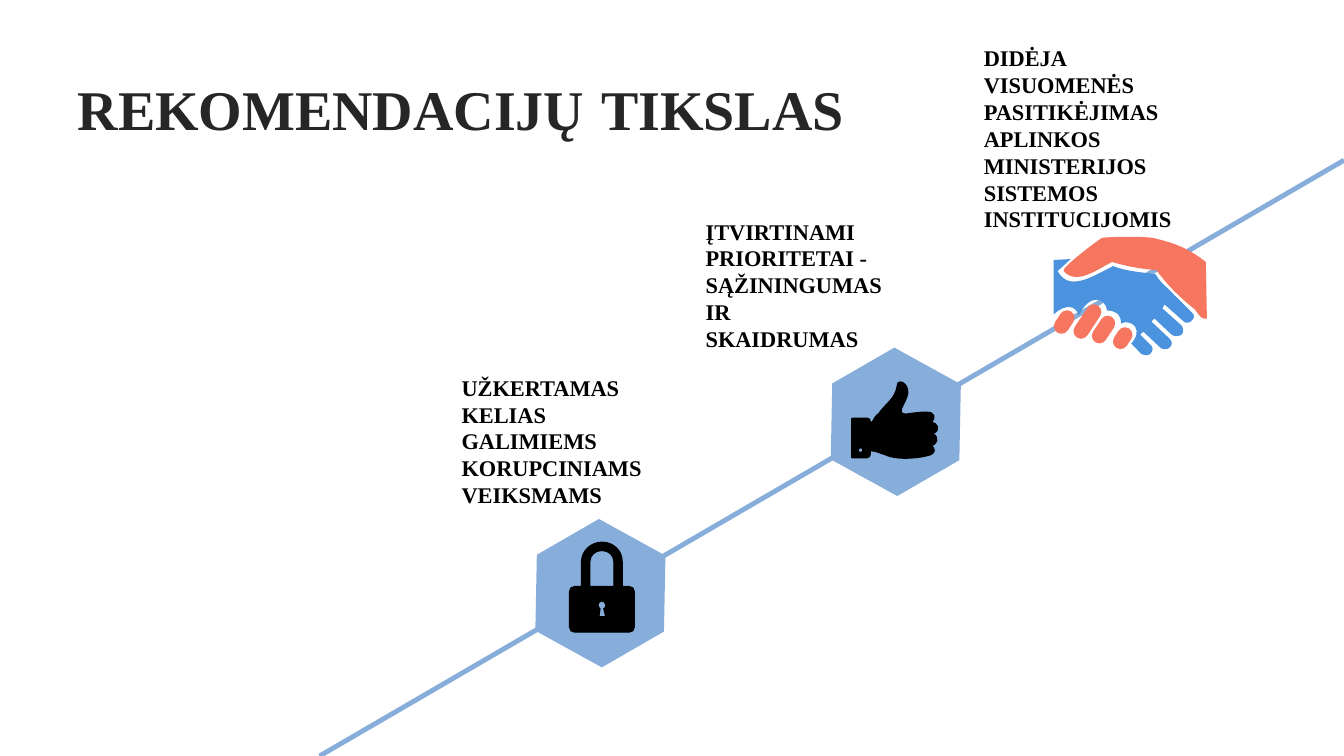
import copy

import pptx
import pptx.dml.color
import pptx.enum.shapes
import pptx.enum.text
import pptx.oxml
import pptx.oxml.ns
import pptx.util

Inches = pptx.util.Inches
Pt = pptx.util.Pt
RGBColor = pptx.dml.color.RGBColor
Shape = pptx.enum.shapes.MSO_SHAPE

BLACK = RGBColor(0x00, 0x00, 0x00)
CHARCOAL = RGBColor(0x26, 0x26, 0x26)
STEEL_BLUE = RGBColor(0x87, 0xAD, 0xDB)
CORAL = RGBColor(0xF7, 0x76, 0x60)
HAND_BLUE = RGBColor(0x4C, 0x93, 0xDF)

THUMB = """M 854 444 C 852 444 851 445 851 447 C 851 448 852 449 854 449
C 855 449 856 448 856 447 C 856 445 855 444 854 444 Z
M 893 379 C 896 379 899 382 900 386 C 903 396 886 410 898 411
C 906 410 910 409 919 409 C 927 409 928 414 924 419 C 929 419 934 427 925 430
C 933 435 928 441 924 442 C 928 446 927 449 923 451 C 914 454 891 457 878 451
C 872 449 868 447 863 447 L 863 451 C 863 452 862 454 860 454 L 845 454
L 845 415 L 860 415 C 862 415 863 416 863 418 L 863 419 C 864 419 864 419 865 419
C 867 416 868 413 872 410 C 878 401 888 396 890 383 C 890 380 891 379 893 379 Z"""

PADLOCK = """M 597 596 C 595 596 593 598 593 600 C 593 602 594 603 595 604
L 594 612 L 601 612 L 599 604 C 601 603 601 602 601 600 C 601 598 599 596 597 596 Z
M 597 546 C 590 546 585 551 585 557 L 585 557 L 585 582 L 609 582 L 609 557
L 609 557 C 609 551 604 546 597 546 Z
M 597 538 C 608 538 617 546 617 557 L 615 557 L 617 557 L 617 582 L 624 582
C 627 582 629 584 629 587 L 629 622 C 629 625 627 627 624 627 L 570 627
C 567 627 565 625 565 622 L 565 587 C 565 584 567 582 570 582 L 577 582 L 577 557
L 577 557 C 577 547 586 538 597 538 Z"""

UPPER_HAND = """M 1103 260 C 1090 266 1068 284 1055 269 C 1052 266 1088 239 1093 236
C 1098 235 1142 234 1147 237 C 1169 242 1182 249 1196 260 L 1197 316
C 1192 317 1191 315 1185 307 C 1169 294 1157 282 1147 268
C 1131 267 1117 264 1103 260 Z"""

LOWER_HAND = """M 1062 257 L 1049 269 C 1060 289 1081 276 1104 264
C 1116 269 1131 270 1146 272 C 1152 282 1158 285 1164 292 L 1182 310
C 1185 312 1185 316 1182 318 C 1180 321 1175 321 1173 318 L 1155 302 L 1153 306
L 1172 323 C 1174 326 1174 330 1172 332 C 1169 334 1165 334 1162 332 L 1145 316
L 1142 319 L 1160 336 C 1163 339 1163 342 1160 345 C 1158 347 1153 347 1151 345
L 1134 329 L 1131 332 L 1141 342 C 1144 344 1144 348 1141 351
C 1139 353 1135 353 1132 351 L 1123 342 L 1122 341 L 1125 337
C 1133 323 1119 317 1112 321 C 1112 311 1105 308 1098 308
C 1097 296 1081 290 1070 313 C 1067 303 1057 301 1045 312 L 1045 258 L 1062 257 Z"""

FINGERS = [(10.48, 3.07, 0.25), (10.71, 3, 0.38), (10.87, 3.12, 0.3), (11.06, 3.24, 0.23)]
HEXAGONS = [(5.21, 5.24), (8.14, 3.54)]
GOALS = [
    (4.48, 3.66, 2, 1.45, "UŽKERTAMAS KELIAS GALIMIEMS KORUPCINIAMS VEIKSMAMS"),
    (6.9, 2.11, 2, 1.45, "ĮTVIRTINAMI PRIORITETAI - SĄŽININGUMAS IR SKAIDRUMAS"),
    (9.66, 0.39, 2.3, 2.19, "DIDĖJA VISUOMENĖS PASITIKĖJIMAS APLINKOS "
                            "MINISTERIJOS SISTEMOS INSTITUCIJOMIS"),
]


def read_contours(outline):
    contours = []
    tokens = iter(outline.split())
    point_counts = {"M": 1, "L": 1, "C": 3, "Z": 0}
    for command in tokens:
        points = [(Inches(int(next(tokens)) / 100), Inches(int(next(tokens)) / 100))
                  for _ in range(point_counts[command])]
        if command == "M":
            contours.append((points[0], []))
        elif points:
            contours[-1][1].append(points)
    return contours


class GoalSlide:
    font_name = "Times New Roman"

    def __init__(self, deck):
        self.page = deck.slides.add_slide(deck.slide_layouts[5])
        self.shapes = self.page.shapes

    def style_text(self, paragraph, size, color):
        paragraph.font.name = self.font_name
        paragraph.font.size = Pt(size)
        paragraph.font.bold = True
        paragraph.font.color.rgb = color
        paragraph.alignment = pptx.enum.text.PP_ALIGN.LEFT

    def paint(self, shape, color, outlined=False):
        shape.shadow.inherit = False
        shape.fill.solid()
        shape.fill.fore_color.rgb = color
        if outlined:
            shape.line.color.rgb = color
            shape.line.width = Pt(1)
        else:
            shape.line.fill.background()

    def title(self, left, top, width, height, words):
        box = self.shapes.title
        box.left, box.top = Inches(left), Inches(top)
        box.width, box.height = Inches(width), Inches(height)
        box.text_frame.vertical_anchor = pptx.enum.text.MSO_ANCHOR.MIDDLE
        para = box.text_frame.paragraphs[0]
        for word, size in words:
            span = para.add_run()
            span.text = word
            span.font.size = Pt(size)
        self.style_text(para, 40, CHARCOAL)

    def label(self, left, top, width, height, text):
        box = self.shapes.add_textbox(Inches(left), Inches(top), Inches(width), Inches(height))
        box.text_frame.word_wrap = True
        para = box.text_frame.paragraphs[0]
        para.text = text
        self.style_text(para, 16, BLACK)

    def line(self, start, end, color, weight):
        line = self.shapes.add_connector(
            pptx.enum.shapes.MSO_CONNECTOR.STRAIGHT,
            *(Inches(value) for value in start + end))
        line.line.color.rgb = color
        line.line.width = Pt(weight)
        line._element.spPr.append(pptx.oxml.parse_xml(
            '<a:effectLst xmlns:a="http://schemas.openxmlformats.org/drawingml/2006/main"/>'))

    def preset(self, shapes, kind, left, top, width, height, rotation, adjustment, color):
        shape = shapes.add_shape(kind, Inches(left), Inches(top), Inches(width), Inches(height))
        shape.rotation = rotation
        shape.adjustments[0] = adjustment
        self.paint(shape, color)

    def outline(self, shapes, outline, color, outlined=False):
        contours = read_contours(outline)
        builder = shapes.build_freeform(*contours[0][0], scale=1.0)
        for index, (start, segments) in enumerate(contours):
            if index:
                builder.move_to(*start)
            builder.add_line_segments([points[-1] for points in segments], close=True)
        shape = builder.convert_to_shape()
        self.bend(shape, [points for _, segments in contours for points in segments])
        self.paint(shape, color, outlined)

    def bend(self, shape, segments):
        qn = pptx.oxml.ns.qn
        edges = list(shape._element.iter(qn("a:lnTo")))
        for edge, points in zip(edges, segments):
            if len(points) == 3:
                edge.tag = qn("a:cubicBezTo")
                for position, (x, y) in enumerate(points[:2]):
                    control = copy.deepcopy(edge[-1])
                    control.set("x", str(x - shape.left))
                    control.set("y", str(y - shape.top))
                    edge.insert(position, control)

    def handshake(self):
        parts = self.shapes.add_group_shape().shapes
        self.outline(parts, UPPER_HAND, CORAL)
        for left, top, length in FINGERS:
            self.preset(parts, Shape.ROUNDED_RECTANGLE, left, top, 0.15, length, 33.4, 0.5, CORAL)
        self.outline(parts, LOWER_HAND, HAND_BLUE)


def main():
    deck = pptx.Presentation()
    deck.slide_width, deck.slide_height = Inches(13.33), Inches(7.5)
    slide = GoalSlide(deck)
    slide.title(0.67, 0.57, 8.63, 0.91, [("REKOMENDACIJŲ", 40), (" ", 48), ("TIKSLAS", 40)])
    slide.line((3.17, 7.5), (13.33, 1.59), STEEL_BLUE, 3.5)
    for left, top in HEXAGONS:
        slide.preset(slide.shapes, Shape.HEXAGON, left, top, 1.49, 1.29, 330, 0.302, STEEL_BLUE)
    for goal in GOALS:
        slide.label(*goal)
    for icon in (THUMB, PADLOCK):
        slide.outline(slide.shapes, icon, BLACK, outlined=True)
    slide.handshake()
    deck.save("out.pptx")


if __name__ == "__main__":
    main()
